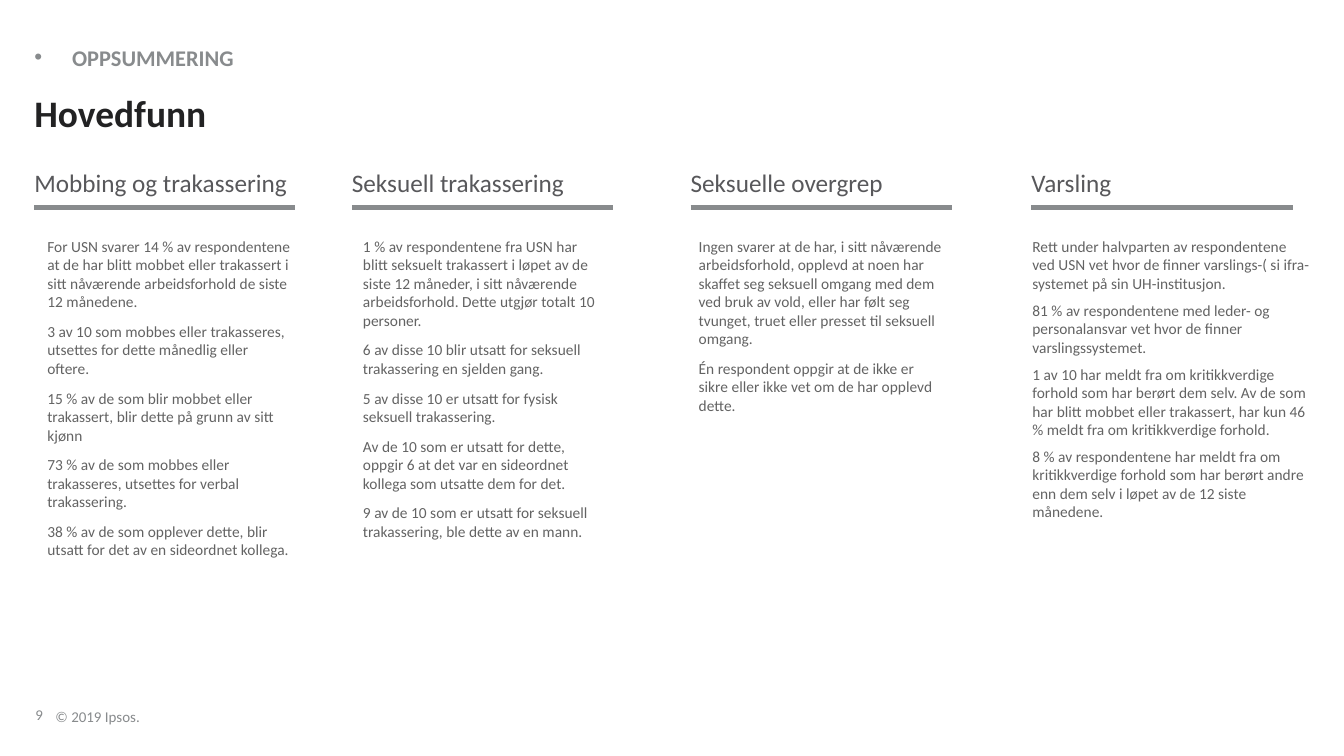
from pptx import Presentation
from pptx.dml.color import RGBColor
from pptx.enum.shapes import MSO_CONNECTOR
from pptx.enum.text import MSO_ANCHOR, MSO_AUTO_SIZE, PP_ALIGN
from pptx.oxml.ns import qn
from pptx.util import Inches, Pt
from lxml import etree

TOP, BOTTOM = MSO_ANCHOR.TOP, MSO_ANCHOR.BOTTOM
LEFT = PP_ALIGN.LEFT
FIXED = MSO_AUTO_SIZE.NONE
LINE = MSO_CONNECTOR.STRAIGHT

FONT = "Calibri"
COLORS = {"gray": "888B8D", "title": "222223", "head": "58585B", "text": "636363"}
RULE_W = 2.59

COLUMNS = [
    {"head": "Mobbing og trakassering", "left": 0.34, "box": (0.39, 2.54, 2.96),
     "inset": (0.08, 0.03), "gap": 4, "items": [
         "For USN svarer 14 % av respondentene at de har blitt mobbet eller trakassert i sitt nåværende arbeidsforhold de siste 12 månedene.",
         "3 av 10 som mobbes eller trakasseres, utsettes for dette månedlig eller oftere.",
         "15 % av de som blir mobbet eller trakassert, blir dette på grunn av sitt kjønn",
         "73 % av de som mobbes eller trakasseres, utsettes for verbal trakassering.",
         "38 % av de som opplever dette, blir utsatt for det av en sideordnet kollega."]},
    {"head": "Seksuell trakassering", "left": 3.49, "box": (3.52, 2.52, 2.88),
     "inset": (0.08, 0.03), "gap": 4, "items": [
         "1 % av respondentene fra USN har blitt seksuelt trakassert i løpet av de siste 12 måneder, i sitt nåværende arbeidsforhold. Dette utgjør totalt 10 personer.",
         "6 av disse 10 blir utsatt for seksuell trakassering en sjelden gang.",
         "5 av disse 10 er utsatt for fysisk seksuell trakassering.",
         "Av de 10 som er utsatt for dette, oppgir 6 at det var en sideordnet kollega som utsatte dem for det.",
         "9 av de 10 som er utsatt for seksuell trakassering, ble dette av en mann."]},
    {"head": "Seksuelle overgrep", "left": 6.85, "box": (6.85, 2.54, 2.96),
     "inset": (0.08, 0.03), "gap": 4, "items": [
         "Ingen svarer at de har, i sitt nåværende arbeidsforhold, opplevd at noen har skaffet seg seksuell omgang med dem ved bruk av vold, eller har følt seg tvunget, truet eller presset til seksuell omgang.",
         "Én respondent oppgir at de ikke er sikre eller ikke vet om de har opplevd dette."]},
    {"head": "Varsling", "left": 10.23, "box": (10.13, 2.93, 3.7),
     "inset": (0.11, 0.04), "gap": 3, "items": [
         "Rett under halvparten av respondentene ved USN vet hvor de finner varslings-( si ifra-systemet på sin UH-institusjon.",
         "81 % av respondentene med leder- og personalansvar vet hvor de finner varslingssystemet.",
         "1 av 10 har meldt fra om kritikkverdige forhold som har berørt dem selv. Av de som har blitt mobbet eller trakassert, har kun 46 % meldt fra om kritikkverdige forhold.",
         "8 % av respondentene har meldt fra om kritikkverdige forhold som har berørt andre enn dem selv i løpet av de 12 siste månedene."]},
]


def place(shape, area):
    shape.left, shape.top, shape.width, shape.height = map(Inches, area)


def write(shape, lines, size, color, bold=False, anchor=TOP,
          inset=(0, 0), gap=0, pitch=1.0, wrap=True):
    frame = shape.text_frame
    frame.text = "\n".join(lines)
    frame.word_wrap = wrap
    frame.auto_size = FIXED
    frame.vertical_anchor = anchor
    frame.margin_left, frame.margin_right = map(Inches, inset)
    frame.margin_top = frame.margin_bottom = 0
    for i, para in enumerate(frame.paragraphs):
        para.alignment = LEFT
        para.line_spacing = pitch
        para.space_before = Pt(gap if i else 0)
        para.space_after = Pt(gap)
        for run in para.runs:
            font = run.font
            font.name, font.size, font.bold = FONT, Pt(size), bold
            font.color.rgb = RGBColor.from_string(COLORS[color])


def add_text(slide, area, lines, size, color, **style):
    box = slide.shapes.add_textbox(*map(Inches, area))
    write(box, lines, size, color, **style)


def add_rule(slide, left, top):
    rule = slide.shapes.add_connector(
        LINE, Inches(left), Inches(top), Inches(left + RULE_W), Inches(top))
    rule.line.color.rgb = RGBColor.from_string(COLORS["gray"])
    rule.line.width = Pt(3.5)
    etree.SubElement(rule._element.spPr, qn("a:effectLst"))


def add_column(slide, col):
    add_rule(slide, col["left"], 2.06)
    add_text(slide, (col["left"], 1.66, RULE_W, 0.37), [col["head"]], 18, "head")
    left, width, height = col["box"]
    add_text(slide, (left, 2.35, width, height), col["items"], 11, "text",
             inset=col["inset"], gap=col["gap"])


def add_titles(slide):
    title, label = slide.shapes.title, slide.placeholders[1]
    place(title, (0.34, 0.94, 11.48, 0.4))
    write(title, ["Hovedfunn"], 26.7, "title", bold=True, pitch=0.9)
    place(label, (0.34, 0.36, 9.78, 0.34))
    props = label.text_frame.paragraphs[0]._p.get_or_add_pPr()
    props.set("marL", "0")
    props.set("indent", "0")
    etree.SubElement(props, qn("a:buNone"))
    write(label, ["OPPSUMMERING"], 16, "gray", bold=True, anchor=BOTTOM)


def add_footer(slide):
    for area, text in (((0.35, 6.83, 0.45, 0.35), "9"),
                       ((0.55, 6.95, 1.01, 0.25), "© 2019 Ipsos.")):
        add_text(slide, area, [text], 10.7, "gray", anchor=BOTTOM,
                 pitch=0.85, wrap=False)


def main():
    deck = Presentation()
    deck.slide_width, deck.slide_height = Inches(13.33), Inches(7.5)
    slide = deck.slides.add_slide(deck.slide_layouts[1])
    add_titles(slide)
    for col in COLUMNS:
        add_column(slide, col)
    add_footer(slide)
    deck.save("out.pptx")


if __name__ == "__main__":
    main()
